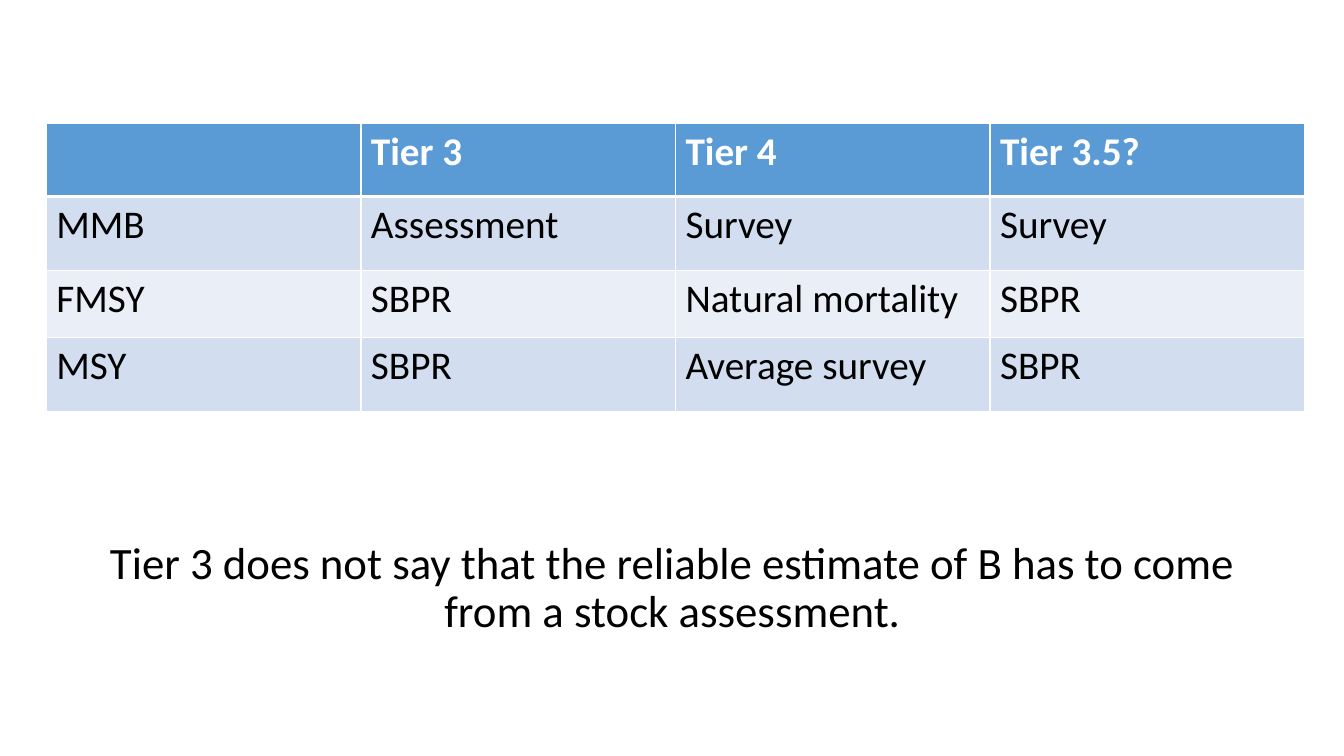
from lxml.etree import SubElement
from pptx import Presentation
from pptx.dml.color import RGBColor
from pptx.enum.text import MSO_ANCHOR, PP_ALIGN
from pptx.oxml.ns import qn
from pptx.util import Inches, Pt

COLOURS = {
    "text": "000000",
    "white": "FFFFFF",
    "header": "5B9BD5",
    "odd_row": "D2DEEF",
    "even_row": "EAEFF7",
}
FONT = "Calibri"
TIERS = [
    ["", "Tier 3", "Tier 4", "Tier 3.5?"],
    ["MMB", "Assessment", "Survey", "Survey"],
    ["FMSY", "SBPR", "Natural mortality", "SBPR"],
    ["MSY", "SBPR", "Average survey", "SBPR"],
]
ROW_HEIGHTS = [0.73, 0.73, 0.67, 0.73]
COLUMN_WIDTH = 3.12


def colour(name):
    return RGBColor.from_string(COLOURS[name])


def format_text(para, size, colour_name, bold=False):
    for span in para.runs:
        span.font.name = FONT
        span.font.size = Pt(size)
        span.font.bold = bold
        span.font.color.rgb = colour(colour_name)


def add_borders(cell, widths):
    """Draw white borders; widths maps each side (L, R, T, B) to points."""
    properties = cell._tc.get_or_add_tcPr()
    for side, width in widths.items():
        line = SubElement(properties, qn(f"a:ln{side}"), w=str(Pt(width)))
        fill = SubElement(line, qn("a:solidFill"))
        SubElement(fill, qn("a:srgbClr"), val=COLOURS["white"])


def set_title(slide, text):
    title = slide.shapes.title
    title.left, title.top = Inches(0.92), Inches(5.12)
    title.width, title.height = Inches(11.5), Inches(1.45)
    frame = title.text_frame
    frame.text = text
    frame.word_wrap = True
    frame.vertical_anchor = MSO_ANCHOR.MIDDLE
    para = frame.paragraphs[0]
    para.alignment = PP_ALIGN.CENTER
    para.line_spacing = 0.9
    format_text(para, 32, "text")


def fill_cell(cell, text, row):
    is_header = row == 0
    add_borders(cell, {"L": 1, "R": 1, "T": 3 if row == 1 else 1, "B": 3 if is_header else 1})
    cell.fill.solid()
    band = "odd_row" if row % 2 else "even_row"
    cell.fill.fore_color.rgb = colour("header" if is_header else band)
    cell.text = text
    format_text(cell.text_frame.paragraphs[0], 28, "white" if is_header else "text", is_header)


def add_tier_table(slide):
    column_count = len(TIERS[0])
    table = slide.shapes.add_table(
        len(TIERS), column_count, Inches(0.46), Inches(1.22),
        Inches(COLUMN_WIDTH * column_count), Inches(sum(ROW_HEIGHTS)),
    ).table
    for column in table.columns:
        column.width = Inches(COLUMN_WIDTH)
    for row, (height, texts) in enumerate(zip(ROW_HEIGHTS, TIERS)):
        table.rows[row].height = Inches(height)
        for column, text in enumerate(texts):
            fill_cell(table.cell(row, column), text, row)


def main():
    deck = Presentation()
    deck.slide_width, deck.slide_height = Inches(13.33), Inches(7.5)
    slide = deck.slides.add_slide(deck.slide_layouts[5])

    # Statement below the table
    set_title(slide, "Tier 3 does not say that the reliable estimate of B "
                     "has to come from a stock assessment.")

    # Comparison of the tiers
    add_tier_table(slide)

    deck.save("out.pptx")


if __name__ == "__main__":
    main()
